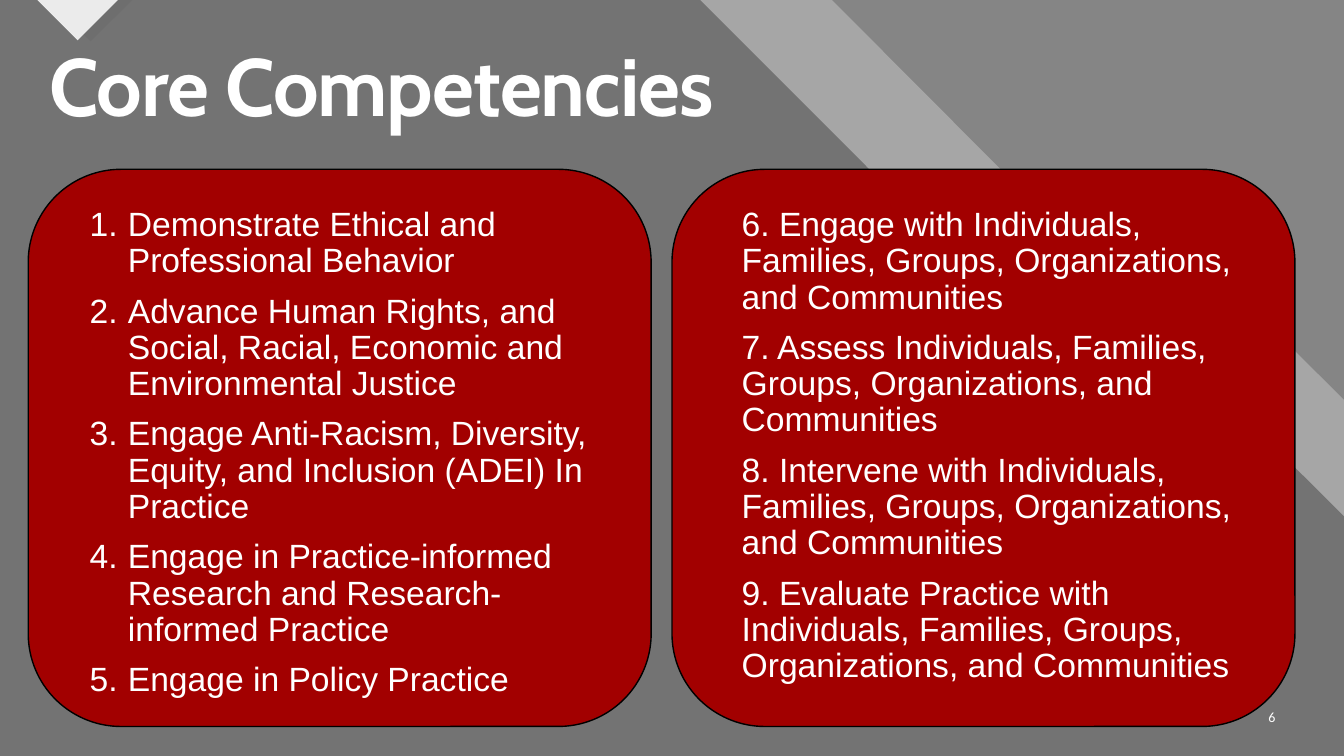
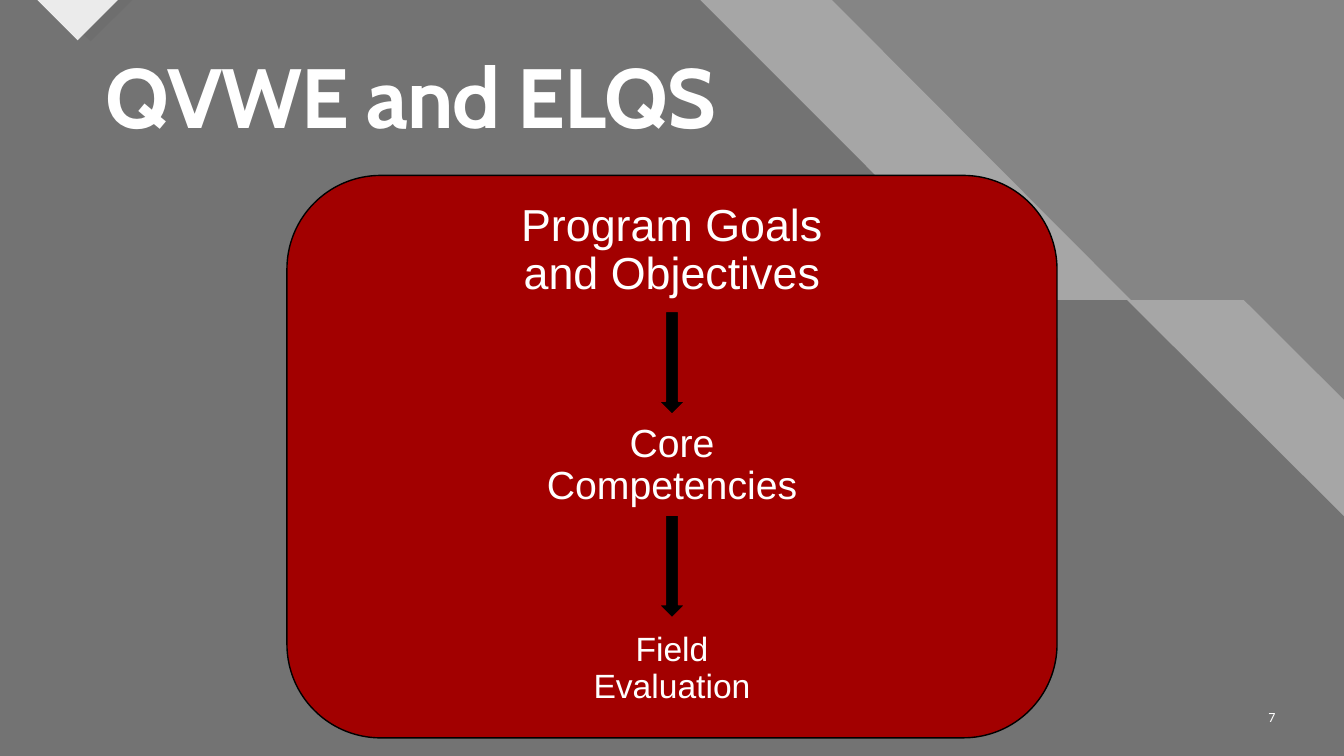
from pptx import Presentation
from pptx.dml.color import RGBColor
from pptx.enum.shapes import MSO_SHAPE
from pptx.enum.text import MSO_ANCHOR, PP_ALIGN
from pptx.oxml.ns import qn
from pptx.util import Inches, Pt
from lxml.etree import SubElement

COLORS = {
    "backdrop": "858585",
    "stripe": "B2B2B2",
    "field": "6E6E6E",
    "notch": "EBEBEB",
    "card": "A20000",
    "ink": "000000",
    "text": "FFFFFF",
}
BACKDROP = [
    ("stripe", 74, [(0, 0), (61.9, 0), (84.15, 39.7), (92.55, 39.7), (100, 52.9), (100, 100), (0, 100)]),
    ("field", 90, [(0, 0), (52.1, 0), (74.4, 39.7), (83.85, 39.7), (100, 68.3), (100, 100), (0, 100)]),
    ("field", 100, [(9.83, 0), (6.75, 5.47), (3.6, 0)]),
    ("notch", 100, [(2.78, 0), (5.78, 5.33), (8.78, 0)]),
]
PAGES = [
    {
        "title": "Core Competencies", "title_size": 58, "title_at": (2.93, 5.47, 57.2, 13.47),
        "number": "6", "cards": [(2.1, 22.4, 46.35, 73.7), (50, 22.4, 46.35, 73.7)],
    },
    {
        "title": "QVWE and ELQS", "title_size": 60, "title_at": (7.13, 6.8, 58, 13.47),
        "number": "7", "cards": [(21.35, 23.2, 57.3, 74.4)],
    },
]
NUMBERED = [
    "Demonstrate Ethical and Professional Behavior",
    "Advance Human Rights, and Social, Racial, Economic and Environmental Justice",
    "Engage Anti-Racism, Diversity, Equity, and Inclusion (ADEI) In Practice",
    "Engage in Practice-informed Research and Research-informed Practice",
    "Engage in Policy Practice",
]
CONTINUED = [
    "6. Engage with Individuals, Families, Groups, Organizations, and Communities",
    "7. Assess Individuals, Families, Groups, Organizations, and Communities",
    "8. Intervene with Individuals, Families, Groups, Organizations, and Communities",
    "9. Evaluate Practice with Individuals, Families, Groups, Organizations, and Communities",
]
STEPS = [
    ("Program Goals and Objectives", 32, 26.13, 25.73),
    ("Core Competencies", 28, 55.33, 21.3),
    ("Field Evaluation", 24, 83.07, 15.83),
]
ARROW_TOPS = [41.2, 68.13]

deck = Presentation()
deck.slide_width, deck.slide_height = Inches(13.333), Inches(7.5)


def share(*percents):
    sides = (deck.slide_width, deck.slide_height)
    return [round(sides[index % 2] * percent / 100) for index, percent in enumerate(percents)]


def write(page, at, lines, size, font="Arial", bold=False, tracking=None, align=PP_ALIGN.LEFT,
          anchor=MSO_ANCHOR.TOP, spacing=0.9, before=6, after=4, margin=0, hanging=0, numbered=False):
    frame = page.shapes.add_textbox(*share(*at)).text_frame
    frame.word_wrap = True
    frame.vertical_anchor = anchor
    for index, line in enumerate(lines):
        para = frame.paragraphs[0] if index == 0 else frame.add_paragraph()
        para.alignment = align
        para.line_spacing = spacing
        para.space_before, para.space_after = Pt(before), Pt(after)
        properties = para._p.get_or_add_pPr()
        properties.set("marL", str(Inches(margin)))
        properties.set("indent", str(Inches(-hanging)))
        if numbered:
            SubElement(properties, qn("a:buFont"), typeface=font)
            SubElement(properties, qn("a:buAutoNum"), type="arabicPeriod")
        span = para.add_run()
        span.text = line
        span.font.name, span.font.size, span.font.bold = font, Pt(size), bold
        span.font.color.rgb = RGBColor.from_string(COLORS["text"])
        if tracking:
            span.font._element.set("spc", str(round(tracking * 100)))


pages = []
for plan in PAGES:
    page = deck.slides.add_slide(deck.slide_layouts[6])
    pages.append(page)
    page.background.fill.solid()
    page.background.fill.fore_color.rgb = RGBColor.from_string(COLORS["backdrop"])

    for color, opacity, corners in BACKDROP:
        points = [share(*corner) for corner in corners]
        builder = page.shapes.build_freeform(*points[0])
        builder.add_line_segments(points[1:], close=True)
        panel = builder.convert_to_shape()
        panel.shadow.inherit = False
        panel.line.fill.background()
        panel.fill.solid()
        panel.fill.fore_color.rgb = RGBColor.from_string(COLORS[color])
        if opacity < 100:
            tint = panel._element.spPr.find(qn("a:solidFill"))[0]
            SubElement(tint, qn("a:alpha"), val=str(opacity * 1000))

    for at in plan["cards"]:
        card = page.shapes.add_shape(MSO_SHAPE.ROUNDED_RECTANGLE, *share(*at))
        card.shadow.inherit = False
        card.fill.solid()
        card.fill.fore_color.rgb = RGBColor.from_string(COLORS["card"])
        card.line.color.rgb = RGBColor.from_string(COLORS["ink"])
        card.line.width = Pt(1)

    write(page, plan["title_at"], [plan["title"]], plan["title_size"], font="Cabin",
          bold=True, tracking=-0.7, before=0, after=0)
    write(page, (92.33, 92.1, 3.3, 5.33), [plan["number"]], 10, font="Calibri",
          align=PP_ALIGN.RIGHT, anchor=MSO_ANCHOR.MIDDLE, spacing=1.0, before=0, after=0)

competencies, goals = pages
write(competencies, (5.63, 26.8, 39.38, 65.2), NUMBERED, 24, margin=0.42, hanging=0.38, numbered=True)
write(competencies, (54.15, 26.8, 40.9, 68.8), CONTINUED, 24, margin=0.04)

for label, size, top, width in STEPS:
    write(goals, (50 - width / 2, top, width, 10.27), [label], size, align=PP_ALIGN.CENTER)

for top in ARROW_TOPS:
    arrow = goals.shapes.add_shape(MSO_SHAPE.DOWN_ARROW, *share(50 - 1.95 / 2, top, 1.95, 13.6))
    arrow.shadow.inherit = False
    arrow.fill.solid()
    arrow.fill.fore_color.rgb = RGBColor.from_string(COLORS["ink"])
    arrow.line.color.rgb = RGBColor.from_string(COLORS["card"])
    arrow.line.width = Pt(1)

deck.save("out.pptx")
